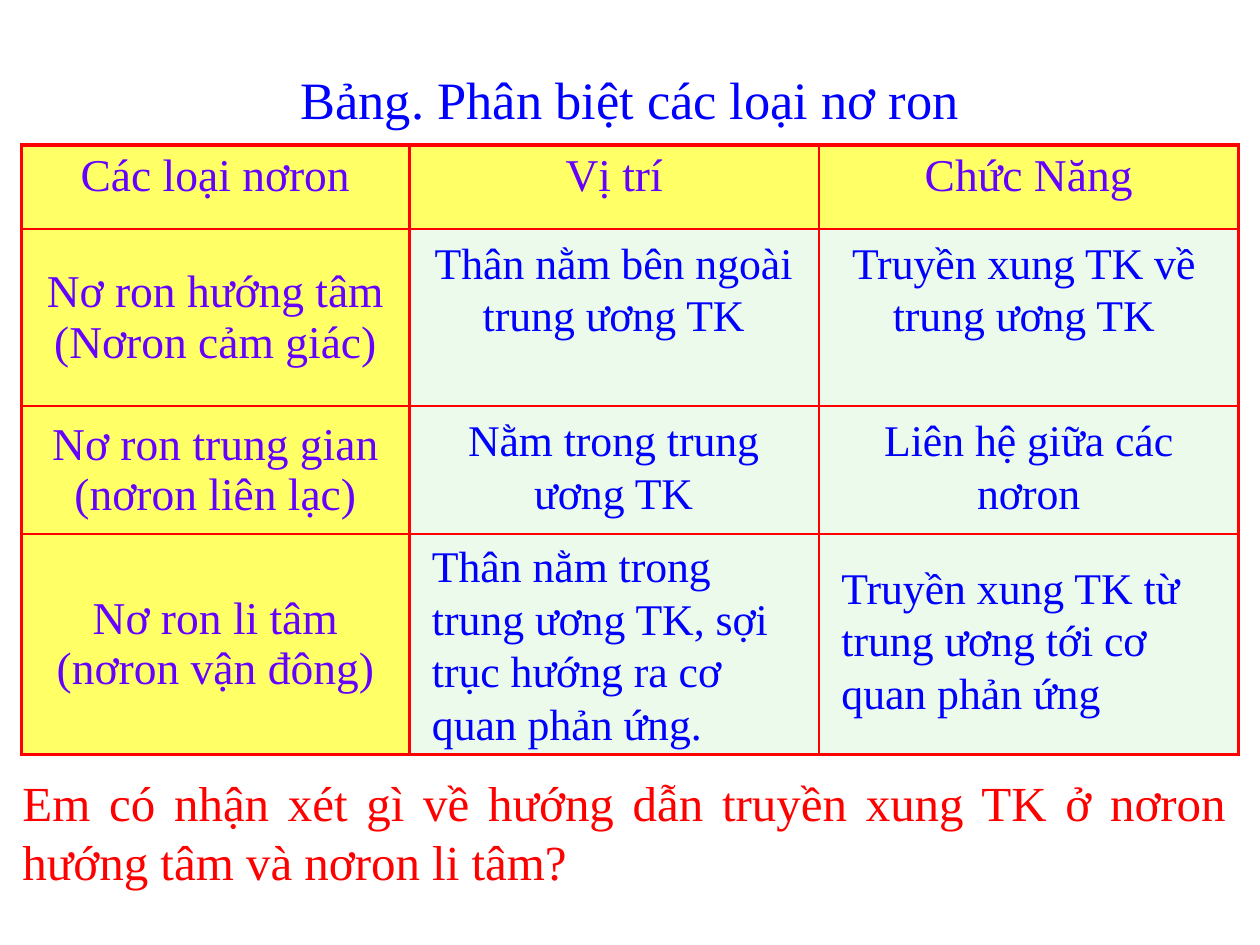
"""Build a slide with a table that compares the kinds of neurons."""
from dataclasses import dataclass

import pptx
import pptx.dml.color
import pptx.enum.text
import pptx.oxml
import pptx.oxml.ns
import pptx.util

Inches = pptx.util.Inches
Pt = pptx.util.Pt
ALIGN = pptx.enum.text.PP_ALIGN
ANCHOR = pptx.enum.text.MSO_ANCHOR

FONT = "Times New Roman"
BLUE, RED, PURPLE = "0000FF", "FF0000", "6600FF"
YELLOW, MINT = "FFFF66", "ECFAEC"
COLS = [3.08, 3.25, 3.33]
ROWS = [0.67, 1.4, 1.02, 1.75]
HEADERS = ["Các loại nơron", "Vị trí", "Chức Năng"]
KINDS = [
    "Nơ ron hướng tâm (Nơron cảm giác)",
    "Nơ ron trung gian (nơron liên lạc)",
    "Nơ ron li tâm (nơron vận đông)",
]


@dataclass
class Label:
    text: str
    left: float
    top: float
    width: float
    height: float
    align: ALIGN = ALIGN.CENTER
    size: float = 25
    color: str = BLUE


LABELS = [
    Label("Bảng. Phân biệt các loại nơ ron", 1, 0.48, 8, 0.6, size=30),
    Label("Thân nằm bên ngoài trung ương TK", 3.33, 1.82, 3.08, 0.94),
    Label("Truyền xung TK về trung ương TK", 6.5, 1.82, 3.25, 0.94),
    Label("Nằm trong trung ương TK", 3.33, 3.23, 3.08, 0.93),
    Label("Liên hệ giữa các nơron", 6.58, 3.23, 3.17, 0.93),
    Label("Thân nằm trong trung ương TK, sợi trục hướng ra cơ quan phản ứng.",
          3.33, 4.23, 3.17, 1.77, ALIGN.LEFT),
    Label("Truyền xung TK từ trung ương tới cơ quan phản ứng",
          6.58, 4.4, 3.17, 1.35, ALIGN.LEFT),
    Label("Em có nhận xét gì về hướng dẫn truyền xung TK ở nơron hướng tâm và nơron li tâm?",
          0.08, 6.08, 9.75, 1.04, ALIGN.JUSTIFY, 28, RED),
]


def rgb(color: str) -> pptx.dml.color.RGBColor:
    return pptx.dml.color.RGBColor.from_string(color)


def write(tf, text: str, size: float, color: str, align: ALIGN) -> None:
    tf.text = text
    p = tf.paragraphs[0]
    p.alignment = align
    r = p.runs[0]
    r.font.name = FONT
    r.font.size = Pt(size)
    r.font.color.rgb = rgb(color)


def add_label(s, label: Label) -> None:
    sp = s.shapes.add_textbox(Inches(label.left), Inches(label.top),
                              Inches(label.width), Inches(label.height))
    tf = sp.text_frame
    tf.word_wrap = True
    tf.auto_size = pptx.enum.text.MSO_AUTO_SIZE.SHAPE_TO_FIT_TEXT
    write(tf, label.text, label.size, label.color, label.align)


def set_borders(cell, row: int, col: int) -> None:
    outer = {"L": col == 0, "R": col == len(COLS) - 1,
             "T": row == 0, "B": row == len(ROWS) - 1}
    tc_pr = cell._tc.get_or_add_tcPr()
    for i, (side, is_outer) in enumerate(outer.items()):
        width = Pt(2.25 if is_outer else 1.5)
        tc_pr.insert(i, pptx.oxml.parse_xml(
            f'<a:ln{side} {pptx.oxml.ns.nsdecls("a")} w="{width}">'
            f'<a:solidFill><a:srgbClr val="{RED}"/></a:solidFill></a:ln{side}>'))


def add_neuron_table(s) -> None:
    table = s.shapes.add_table(len(ROWS), len(COLS), Inches(0.17), Inches(1.15),
                               Inches(sum(COLS)), Inches(sum(ROWS))).table
    for column, width in zip(table.columns, COLS):
        column.width = Inches(width)
    for row, height in zip(table.rows, ROWS):
        row.height = Inches(height)
    texts = [HEADERS] + [[kind, "", ""] for kind in KINDS]
    for i, row_texts in enumerate(texts):
        for j, text in enumerate(row_texts):
            cell = table.cell(i, j)
            cell.fill.solid()
            cell.fill.fore_color.rgb = rgb(YELLOW if text else MINT)
            if text:
                cell.vertical_anchor = ANCHOR.MIDDLE if i else ANCHOR.TOP
                write(cell.text_frame, text, 26, PURPLE, ALIGN.CENTER)
            set_borders(cell, i, j)


def main() -> None:
    prs = pptx.Presentation()
    prs.slide_width, prs.slide_height = Inches(10), Inches(7.5)
    s = prs.slides.add_slide(prs.slide_layouts[6])
    add_neuron_table(s)
    for label in LABELS:
        add_label(s, label)
    prs.save("out.pptx")


if __name__ == "__main__":
    main()
